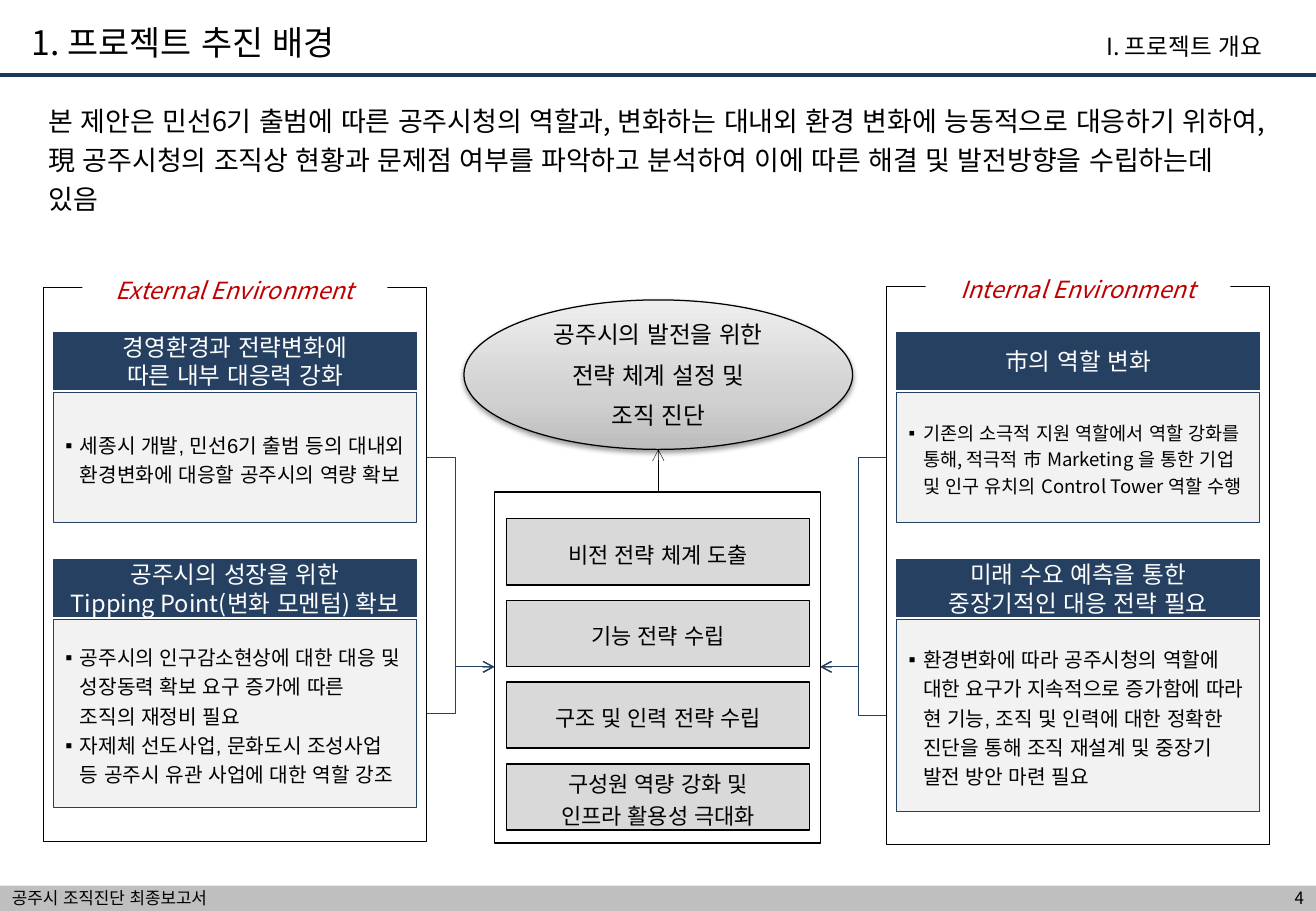
"""Builds the project background slide with two environment panels around a strategy core."""
from dataclasses import dataclass, replace
from typing import Any, NamedTuple

from lxml.etree import SubElement as Sub
from pptx import Presentation as Deck
from pptx.dml.color import RGBColor as Rgb
from pptx.enum.lang import MSO_LANGUAGE_ID as Lang
from pptx.enum.shapes import MSO_CONNECTOR as Link, MSO_SHAPE as Form
from pptx.enum.text import MSO_ANCHOR as Anchor, PP_ALIGN as Align
from pptx.oxml.ns import qn
from pptx.util import Pt


@dataclass(frozen=True)
class Theme:
    black: str = "000000"
    white: str = "FFFFFF"
    navy: str = "254061"
    rule: str = "17375E"
    red: str = "C00000"
    step: str = "D9D9D9"
    pale: str = "F2F2F2"
    bar: str = "BFBFBF"
    sans: str = "Noto Sans CJK KR"
    latin: str = "Arial"
    title: float = 20
    lead: float = 16
    head: float = 14
    label: float = 13
    body: float = 12
    small: float = 11
    foot: float = 10


LOOK = Theme()


class Box(NamedTuple):
    left: float
    top: float
    width: float
    height: float


@dataclass(frozen=True)
class Type:
    size: float
    color: str = LOOK.black
    font: str = LOOK.sans
    align: Any = Align.LEFT
    anchor: Any = Anchor.MIDDLE
    factor: float = 1
    before: float = 0
    wrap: bool = True
    slant: bool = False
    bullet: str = ""
    side: float = 7.2


class Card(NamedTuple):
    head: tuple[str, ...]
    body: tuple[str, ...]
    top: float
    height: float
    kind: Type


class Panel(NamedTuple):
    name: str
    frame: Box
    port: float
    goal: float
    cards: tuple[Card, ...]


TITLE = Type(LOOK.title, factor=0.9, anchor=Anchor.TOP, side=14.4)
LEAD = Type(LOOK.lead, factor=1.2, anchor=Anchor.TOP)
PART = Type(LOOK.head, align=Align.RIGHT)
NAME = Type(LOOK.head, LOOK.red, align=Align.CENTER, slant=True)
HEAD = Type(LOOK.head, LOOK.white, align=Align.CENTER, wrap=False, side=3.6)
BODY = Type(LOOK.body, font=LOOK.latin, factor=1.2, bullet="▪")
SMALL = replace(BODY, size=LOOK.small, font=LOOK.sans)
STEP = Type(LOOK.label, font=LOOK.latin, align=Align.CENTER, factor=1.2)
GOAL = Type(LOOK.head, align=Align.CENTER, before=7, wrap=False)
FOOT = Type(LOOK.foot)
PAGE = replace(FOOT, align=Align.RIGHT)

CORE = Box(293, 291.6, 193.2, 208.1)
OVAL = Box(275, 177.8, 230.4, 88.6)
BAR = Box(0, 524.9, 780, 15.1)
MID = 395.3
STEPS = (("비전 전략 체계 도출",), ("기능 전략 수립",), ("구조 및 인력 전략 수립",),
         ("구성원 역량 강화 및", "인프라 활용성 극대화"))
PANELS = (
    Panel("External Environment", Box(25.9, 170.6, 226.8, 328.3), 247, CORE.left, (
        Card(("경영환경과 전략변화에", "따른 내부 대응력 강화"),
             ("세종시 개발, 민선6기 출범 등의 대내외 환경변화에 대응할 공주시의 역량 확보",),
             197.3, 77, BODY),
        Card(("공주시의 성장을 위한", "Tipping Point(변화 모멘텀) 확보"),
             ("공주시의 인구감소현상에 대한 대응 및 성장동력 확보 요구 증가에 따른 조직의 재정비 필요",
              "자제체 선도사업, 문화도시 조성사업 등 공주시 유관 사업에 대한 역할 강조"),
             331.9, 111.6, BODY))),
    Panel("Internal Environment", Box(525.6, 169.9, 226.8, 330.5), 531.4, CORE.left + CORE.width, (
        Card(("市의 역할 변화",),
             ("기존의 소극적 지원 역할에서 역할 강화를 통해, 적극적 市 Marketing 을 통한 기업 및 인구 유치의 "
              "Control Tower 역할 수행",), 197.3, 77, SMALL),
        Card(("미래 수요 예측을 통한", "중장기적인 대응 전략 필요"),
             ("환경변화에 따라 공주시청의 역할에 대한 요구가 지속적으로 증가함에 따라 현 기능, 조직 및 인력에 "
              "대한 정확한 진단을 통해 조직 재설계 및 중장기 발전 방안 마련 필요",),
             331.9, 113.8, BODY))),
)


def apply(item: Any, style: dict[str, Any]) -> None:
    for key, value in style.items():
        setattr(item, key, value)


def place(box: Box) -> dict[str, Any]:
    return {key: Pt(value) for key, value in box._asdict().items()}


def write(shape: Any, lines: tuple[str, ...], kind: Type) -> None:
    frame = shape.text_frame
    apply(frame, {"word_wrap": kind.wrap, "vertical_anchor": kind.anchor,
                  "margin_left": Pt(kind.side), "margin_right": Pt(kind.side),
                  "margin_top": Pt(3.6), "margin_bottom": Pt(3.6)})
    for index, line in enumerate(lines):
        para = frame.add_paragraph() if index else frame.paragraphs[0]
        apply(para, {"alignment": kind.align, "space_before": Pt(kind.before),
                     "line_spacing": Pt(round(kind.size * kind.factor * 1.2, 1))})
        if kind.bullet:
            props = para._p.get_or_add_pPr()
            props.set("marL", str(Pt(8.6)))
            props.set("indent", str(-Pt(8.6)))
            Sub(props, qn("a:buFont"), typeface=LOOK.latin)
            Sub(props, qn("a:buChar"), char=kind.bullet)
        run = para.add_run()
        run.text = line
        apply(run.font, {"size": Pt(kind.size), "name": kind.font, "italic": kind.slant,
                         "bold": False, "language_id": Lang.KOREAN})
        run.font.color.rgb = Rgb.from_string(kind.color)
        Sub(run.font._element, qn("a:ea"), typeface=LOOK.sans)


def block(shapes: Any, box: Box, fill: str, edge: str = "", weight: float = 0.75,
          form: Any = Form.RECTANGLE) -> Any:
    shape = shapes.add_shape(form, **place(box))
    shape.shadow.inherit = False
    shape.fill.solid()
    shape.fill.fore_color.rgb = Rgb.from_string(fill)
    if edge:
        shape.line.color.rgb = Rgb.from_string(edge)
        shape.line.width = Pt(weight)
    else:
        shape.line.fill.background()
    return shape


def label(shapes: Any, box: Box, line: str, kind: Type) -> None:
    write(shapes.add_textbox(**place(box)), (line,), kind)


def join(shapes: Any, ends: tuple[float, ...], color: str, weight: float,
         form: Any = Link.STRAIGHT, arrow: bool = True) -> None:
    line = shapes.add_connector(form, *map(Pt, ends))
    line.line.color.rgb = Rgb.from_string(color)
    line.line.width = Pt(weight)
    if arrow:
        Sub(line.line._get_or_add_ln(), qn("a:tailEnd"), type="arrow")
    Sub(line._element.spPr, qn("a:effectLst"))


def panel(shapes: Any, side: Panel) -> None:
    for card in side.cards:
        join(shapes, (side.port, card.top + 35.3 + card.height / 2, side.goal, MID),
             LOOK.navy, 0.75, Link.ELBOW)
    left, top = side.frame[:2]
    block(shapes, side.frame, LOOK.white, LOOK.black)
    write(block(shapes, Box(left + 23, top - 10.8, 180.7, 24.5), LOOK.white), (side.name,), NAME)
    for card in side.cards:
        body = block(shapes, Box(left + 5.8, card.top + 35.3, 215.3, card.height),
                     LOOK.pale, LOOK.navy, form=Form.ROUNDED_RECTANGLE)
        body.adjustments[0] = 0
        write(body, card.body, card.kind)
        head = block(shapes, Box(left + 5.8, card.top, 215.3, 33.8), LOOK.navy, LOOK.navy)
        write(head, card.head, HEAD)


def oval(shapes: Any) -> None:
    shape = block(shapes, OVAL, LOOK.step, LOOK.black, form=Form.OVAL)
    shape.fill.gradient()
    shape.fill.gradient_angle = 90
    stops = shape.fill._fill._gradFill.gsLst
    stops.clear()
    for spot, color in ((0, "BDBDBD"), (35, "D1D1D1"), (100, "EEEEEE")):
        Sub(Sub(stops, qn("a:gs"), pos=str(spot * 1000)), qn("a:srgbClr"), val=color)
    cast = Sub(shape._element.spPr.find(qn("a:effectLst")), qn("a:outerShdw"),
               blurRad="40000", dist="20000", dir="5400000", rotWithShape="0")
    Sub(Sub(cast, qn("a:srgbClr"), val=LOOK.black), qn("a:alpha"), val="38000")
    write(shape, ("공주시의 발전을 위한", "전략 체계 설정 및", "조직 진단"), GOAL)


def main() -> None:
    deck = Deck()
    apply(deck, {"slide_width": Pt(780), "slide_height": Pt(540)})
    shapes = deck.slides.add_slide(deck.slide_layouts[5]).shapes
    apply(shapes.title, place(Box(4.3, 11.5, 223.2, 28.8)))
    write(shapes.title, ("1. 프로젝트 추진 배경",), TITLE)
    label(shapes, Box(635.8, 15.1, 119.5, 24.5), "I. 프로젝트 개요", PART)
    join(shapes, (0, 44.6, 780, 44.6), LOOK.rule, 2.5, arrow=False)
    label(shapes, Box(21.6, 54.7, 737.3, 77),
          "본 제안은 민선6기 출범에 따른 공주시청의 역할과, 변화하는 대내외 환경 변화에 능동적으로 대응하기 위하여, "
          "現 공주시청의 조직상 현황과 문제점 여부를 파악하고 분석하여 이에 따른 해결 및 발전방향을 수립하는데 있음", LEAD)
    for side in PANELS:
        panel(shapes, side)
    block(shapes, CORE, LOOK.white, LOOK.black)
    for index, lines in enumerate(STEPS):
        write(block(shapes, Box(300.2, 307.4 + 48.5 * index, 179.6, 39.2),
                    LOOK.step, LOOK.black, 1), lines, STEP)
    oval(shapes)
    join(shapes, (390.2, CORE.top, 390.2, OVAL.top + OVAL.height), LOOK.black, 0.25)
    block(shapes, BAR, LOOK.bar)
    label(shapes, BAR._replace(width=390), "공주시 조직진단 최종보고서", FOOT)
    label(shapes, BAR._replace(left=686.9, width=93.1), "4", PAGE)
    deck.save("out.pptx")


if __name__ == "__main__":
    main()
